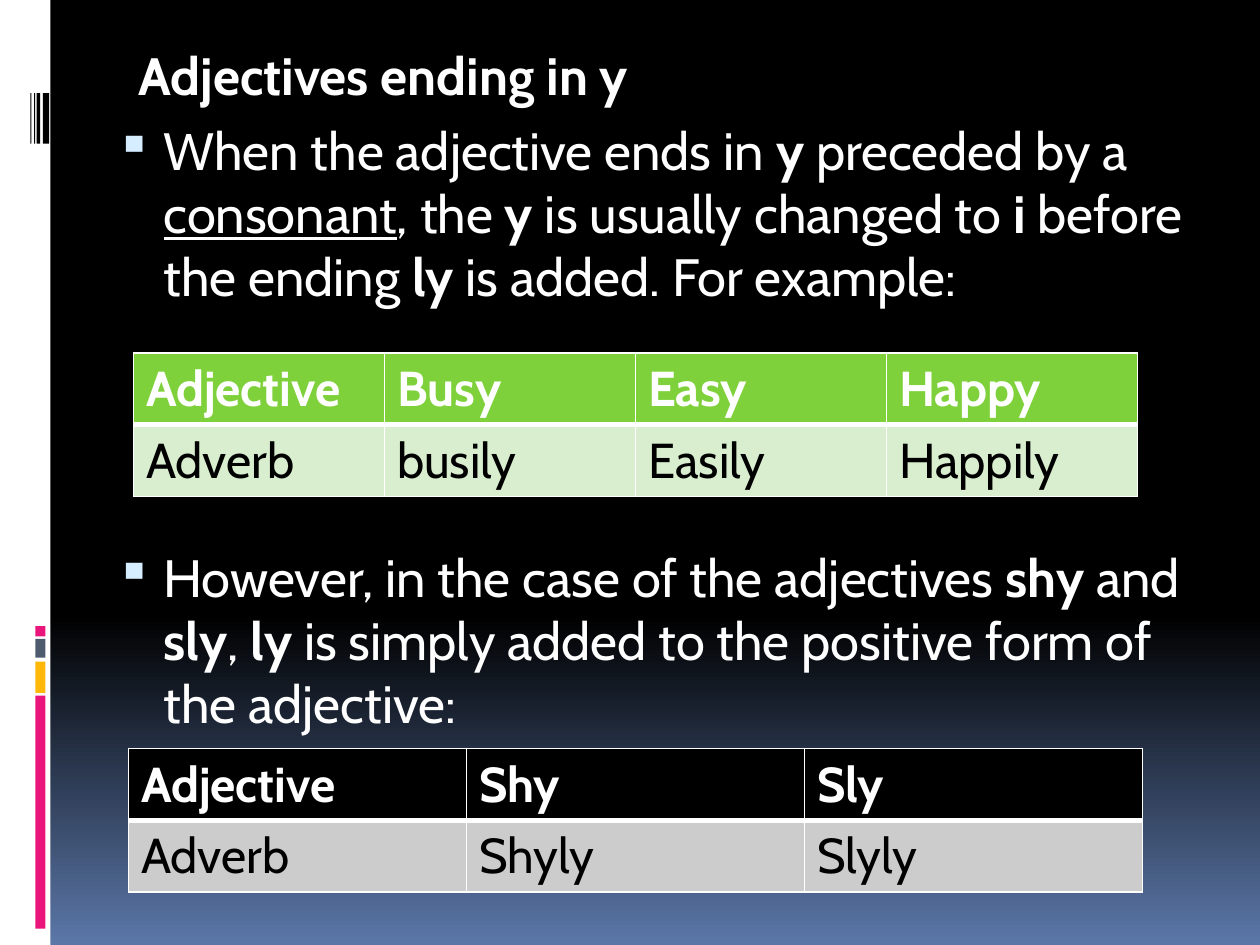
from dataclasses import dataclass

from lxml.etree import SubElement
from pptx import Presentation
from pptx.dml.color import RGBColor
from pptx.enum.shapes import MSO_SHAPE
from pptx.oxml.ns import qn
from pptx.util import Inches, Pt


@dataclass(frozen=True)
class Theme:
    font: str = "Cabin"
    body_size: int = 30
    table_size: int = 28
    white: str = "FFFFFF"
    black: str = "000000"
    blue: str = "5B77A8"
    bullet: str = "D6ECFF"
    pink: str = "EA157A"
    amber: str = "FEB80A"
    slate: str = "4E5B6F"
    green: str = "7FD13B"
    pale_green: str = "D8EECE"
    grey: str = "CCCCCC"


THEME = Theme()
BOLD = {"bold": True}
UNDERLINED = {"underline": True}


def add_words(paragraph, words, size, color, **formats):
    run = paragraph.add_run()
    run.text = words
    run.font.color.rgb = RGBColor.from_string(color)
    settings = {"name": THEME.font, "size": Pt(size), "bold": False} | formats
    for attribute, value in settings.items():
        setattr(run.font, attribute, value)


def add_border(cell, side, width):
    """Draw a white line on one side of a cell: L, R, T or B."""
    line = SubElement(cell._tc.get_or_add_tcPr(), qn(f"a:ln{side}"), w=str(Pt(width)))
    fill = SubElement(line, qn("a:solidFill"))
    SubElement(fill, qn("a:srgbClr"), val=THEME.white)


prs = Presentation()
prs.slide_width = Inches(10)
prs.slide_height = Inches(7.5)
slide = prs.slides.add_slide(prs.slide_layouts[6])

# Background: black, fading to blue at the foot
backdrop = slide.background.fill
backdrop.gradient()
backdrop.gradient_angle = 270
fade = [(0.65, THEME.black), (1, THEME.blue)]
for stop, (position, color) in zip(backdrop.gradient_stops, fade):
    stop.position = position
    stop.color.rgb = RGBColor.from_string(color)

# Side strip with coloured blocks and thin bars
strip_parts = [
    (0, 0, 0.4, 7.5, THEME.white),
    (0.28, 5.52, 0.08, 1.85, THEME.pink),
    (0.28, 5.25, 0.08, 0.25, THEME.amber),
    (0.28, 5.07, 0.08, 0.15, THEME.slate),
    (0.28, 4.97, 0.08, 0.08, THEME.pink),
]
bars = [(0.34, 0.05), (0.29, 0.03), (0.27, 0.01), (0.24, 0.01)]
strip_parts += [(left, 0.74, width, 0.4, THEME.black) for left, width in bars]
for *place, color in strip_parts:
    block = slide.shapes.add_shape(MSO_SHAPE.RECTANGLE, *map(Inches, place))
    block.shadow.inherit = False
    block.fill.solid()
    block.fill.fore_color.rgb = RGBColor.from_string(color)
    block.line.fill.background()

# Heading and rules: left margin, indent, space before, bulleted, runs
paragraphs = [
    (0.25, 0, 7, False, [("Adjectives ending in y", BOLD)]),
    (0.45, -0.38, 7, True, [
        ("When the adjective ends in ", {}),
        ("y", BOLD),
        (" preceded by a ", {}),
        ("consonant", UNDERLINED),
        (", the ", {}),
        ("y", BOLD),
        (" is usually changed to ", {}),
        ("i", BOLD),
        (" before the ending ", {}),
        ("ly", BOLD),
        (" is added. For example:", {}),
    ]),
    # The wide space before this rule makes room for the first table
    (0.45, -0.38, 136, True, [
        ("However, in the case of the adjectives ", {}),
        ("shy", BOLD),
        (" and ", {}),
        ("sly", BOLD),
        (", ", {}),
        ("ly", BOLD),
        (" is simply added to the positive form of the adjective:", {}),
    ]),
]
rules = slide.shapes.add_textbox(
    Inches(0.75), Inches(0.29), Inches(9), Inches(6.47)
).text_frame
rules.word_wrap = True
for index, (margin, indent, space, bulleted, runs) in enumerate(paragraphs):
    paragraph = rules.add_paragraph() if index else rules.paragraphs[0]
    paragraph.space_before = Pt(space)
    properties = paragraph._p.get_or_add_pPr()
    properties.set("marL", str(Inches(margin)))
    properties.set("indent", str(Inches(indent)))
    if bulleted:
        bullet_color = SubElement(properties, qn("a:buClr"))
        SubElement(bullet_color, qn("a:srgbClr"), val=THEME.bullet)
        SubElement(properties, qn("a:buSzPct"), val="95000")
        SubElement(properties, qn("a:buChar"), char="▪")
    for words, formats in runs:
        add_words(paragraph, words, THEME.body_size, THEME.white, **formats)

# Example tables: left, top, width, header fill, body fill, rows
ROW_HEIGHT = 0.57
examples = [
    (1.06, 2.8, 7.97, THEME.green, THEME.pale_green, [
        ["Adjective", "Busy", "Easy", "Happy"],
        ["Adverb", "busily", "Easily", "Happily"],
    ]),
    (1.02, 5.94, 8.05, THEME.black, THEME.grey, [
        ["Adjective", "Shy", "Sly"],
        ["Adverb", "Shyly", "Slyly"],
    ]),
]
for left, top, width, header_fill, body_fill, rows in examples:
    table = slide.shapes.add_table(
        len(rows), len(rows[0]), Inches(left), Inches(top),
        Inches(width), Inches(ROW_HEIGHT * len(rows)),
    ).table
    row_looks = [(header_fill, THEME.white, True, 3), (body_fill, THEME.black, False, 1)]
    for r, (row, look) in enumerate(zip(rows, row_looks)):
        fill, color, bold, bottom_width = look
        for c, word in enumerate(row):
            cell = table.cell(r, c)
            for side in "LRT":
                add_border(cell, side, 3 if r and side == "T" else 1)
            add_border(cell, "B", bottom_width)
            cell.fill.solid()
            cell.fill.fore_color.rgb = RGBColor.from_string(fill)
            add_words(
                cell.text_frame.paragraphs[0], word, THEME.table_size, color, bold=bold
            )

prs.save("out.pptx")
